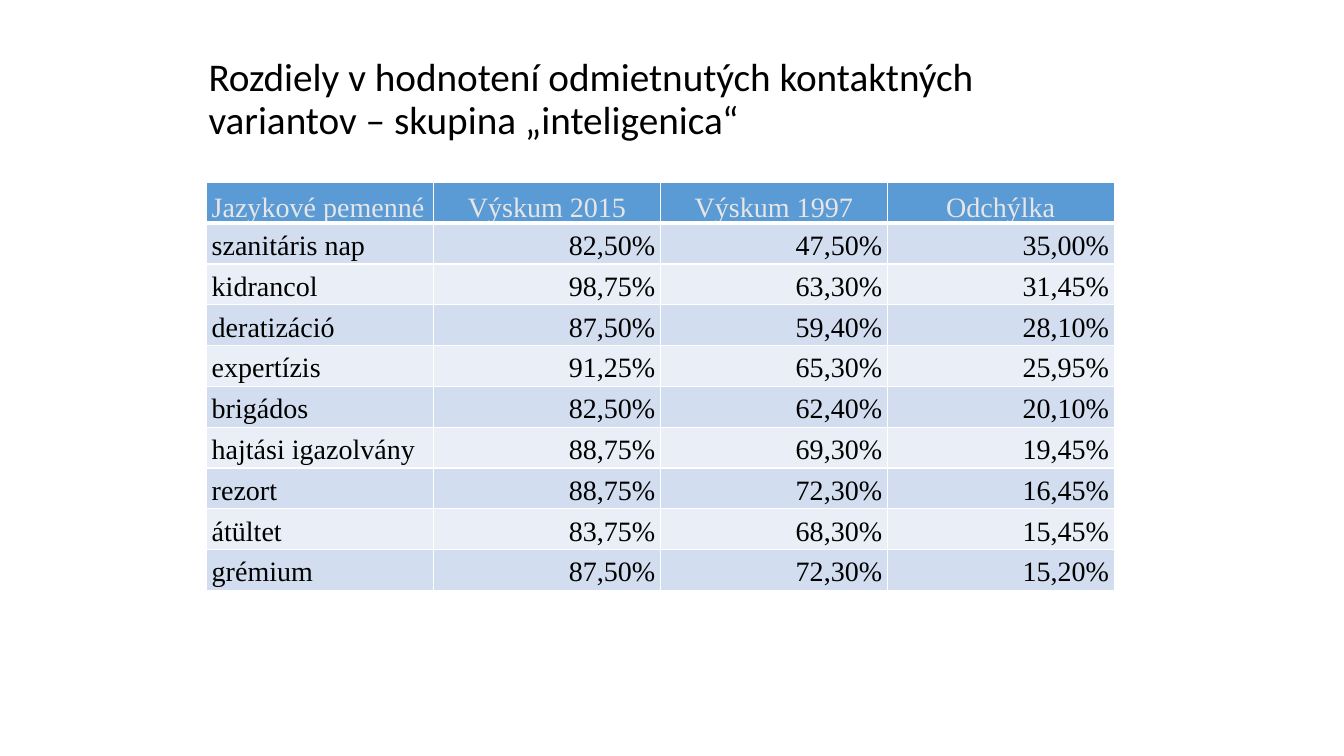
from dataclasses import astuple, dataclass

from lxml.etree import SubElement
from pptx import Presentation
from pptx.dml.color import RGBColor
from pptx.enum.text import MSO_ANCHOR as Anchor, PP_ALIGN as Align
from pptx.oxml.ns import qn
from pptx.slide import Slide
from pptx.table import _Cell as Cell
from pptx.text.text import _Paragraph as Paragraph
from pptx.util import Inches, Pt

BLACK = RGBColor(0x00, 0x00, 0x00)
WHITE = RGBColor(0xFF, 0xFF, 0xFF)
HEADER_TEXT = RGBColor(0xE7, 0xE6, 0xE6)
HEADER_FILL = RGBColor(0x5B, 0x9B, 0xD5)
BAND_FILLS = (RGBColor(0xD2, 0xDE, 0xEF), RGBColor(0xEA, 0xEF, 0xF7))

TITLE = "Rozdiely v hodnotení odmietnutých kontaktných variantov – skupina „inteligenica“"


@dataclass(frozen=True)
class SurveyRow:
    variant: str
    survey_2015: str
    survey_1997: str
    deviation: str


@dataclass(frozen=True)
class RowStyle:
    fill: RGBColor
    color: RGBColor
    anchor: Anchor
    number_align: Align
    bottom_width: float


HEADER = SurveyRow("Jazykové pemenné", "Výskum 2015", "Výskum 1997", "Odchýlka")
RESULTS = (
    SurveyRow("szanitáris nap", "82,50%", "47,50%", "35,00%"),
    SurveyRow("kidrancol", "98,75%", "63,30%", "31,45%"),
    SurveyRow("deratizáció", "87,50%", "59,40%", "28,10%"),
    SurveyRow("expertízis", "91,25%", "65,30%", "25,95%"),
    SurveyRow("brigádos", "82,50%", "62,40%", "20,10%"),
    SurveyRow("hajtási igazolvány", "88,75%", "69,30%", "19,45%"),
    SurveyRow("rezort", "88,75%", "72,30%", "16,45%"),
    SurveyRow("átültet", "83,75%", "68,30%", "15,45%"),
    SurveyRow("grémium", "87,50%", "72,30%", "15,20%"),
)

HEADER_STYLE = RowStyle(HEADER_FILL, HEADER_TEXT, Anchor.BOTTOM, Align.CENTER, 3)
BAND_STYLES = tuple(
    RowStyle(fill, BLACK, Anchor.MIDDLE, Align.RIGHT, 1) for fill in BAND_FILLS
)


def add_span(para: Paragraph, text: str, font: str, size: float, color: RGBColor) -> None:
    span = para.add_run()
    span.text = text
    span.font.name = font
    span.font.size = Pt(size)
    span.font.color.rgb = color


def add_title(page: Slide) -> None:
    box = page.shapes.add_textbox(Inches(1.97), Inches(0.37), Inches(9), Inches(1.25))
    frame = box.text_frame
    frame.word_wrap = True
    frame.vertical_anchor = Anchor.MIDDLE
    para = frame.paragraphs[0]
    para.line_spacing = 0.9
    add_span(para, TITLE, "Calibri", 28, BLACK)


def add_borders(cell: Cell, bottom_width: float) -> None:
    properties = cell._tc.get_or_add_tcPr()
    for edge, width in (("lnL", 1), ("lnR", 1), ("lnT", 1), ("lnB", bottom_width)):
        line = SubElement(properties, qn(f"a:{edge}"), w=str(Pt(width)))
        fill = SubElement(line, qn("a:solidFill"))
        SubElement(fill, qn("a:srgbClr"), val=str(WHITE))


def fill_cell(cell: Cell, text: str, align: Align, style: RowStyle) -> None:
    add_borders(cell, style.bottom_width)
    cell.fill.solid()
    cell.fill.fore_color.rgb = style.fill
    cell.vertical_anchor = style.anchor
    cell.margin_left = cell.margin_right = Inches(0.05)
    cell.margin_top = cell.margin_bottom = 0
    para = cell.text_frame.paragraphs[0]
    para.alignment = align
    para.line_spacing = 1.15
    add_span(para, text, "Times New Roman", 20, style.color)


def add_survey_table(page: Slide) -> None:
    rows = (HEADER, *RESULTS)
    table = page.shapes.add_table(
        len(rows), 4, Inches(2.05), Inches(1.81), Inches(9), Inches(4.05)
    ).table
    for row_index, row in enumerate(rows):
        style = BAND_STYLES[(row_index - 1) % 2] if row_index else HEADER_STYLE
        for column_index, text in enumerate(astuple(row)):
            align = style.number_align if column_index else Align.LEFT
            fill_cell(table.cell(row_index, column_index), text, align, style)


def main() -> None:
    deck = Presentation()
    deck.slide_width = Inches(13.33)
    deck.slide_height = Inches(7.5)
    page = deck.slides.add_slide(deck.slide_layouts[6])
    add_title(page)
    add_survey_table(page)
    deck.save("out.pptx")


if __name__ == "__main__":
    main()
